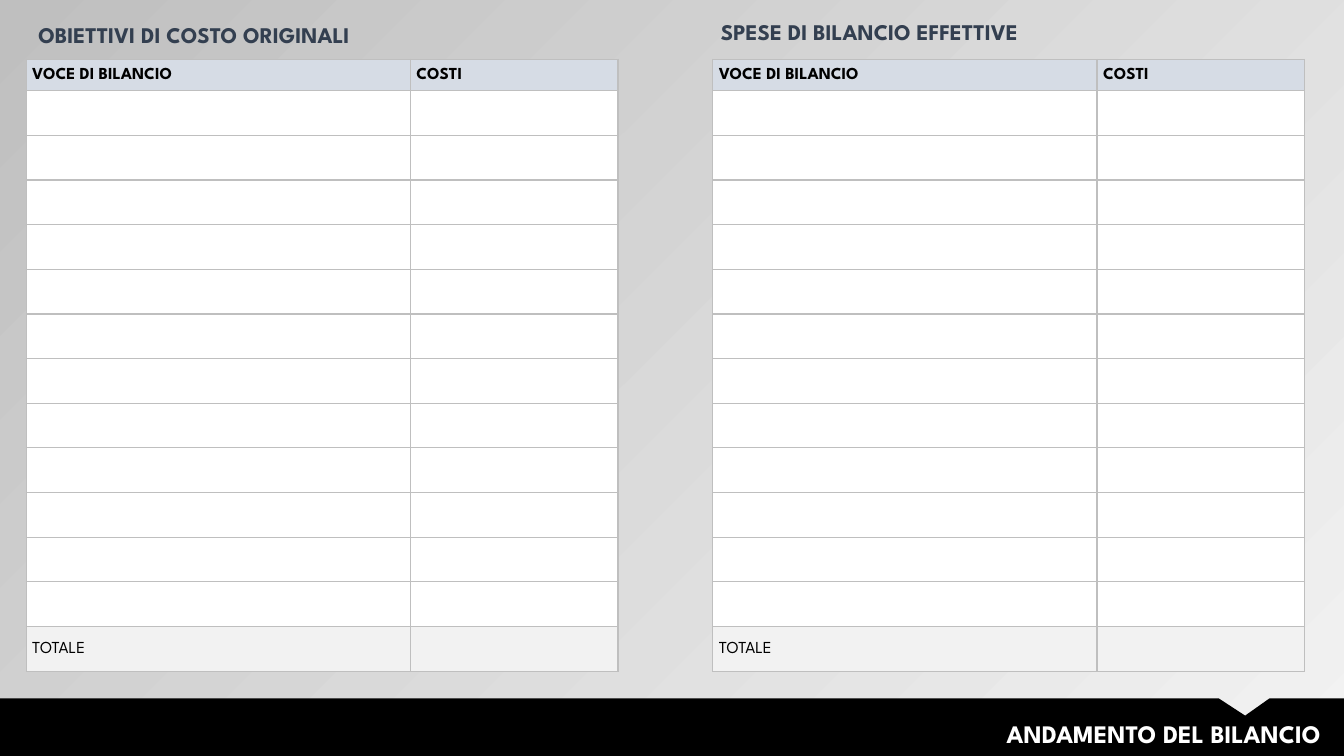
from lxml.etree import SubElement as Sub
from pptx import Presentation
from pptx.dml.color import RGBColor as RGB
from pptx.enum.text import MSO_ANCHOR as Anchor, MSO_AUTO_SIZE as Auto, PP_ALIGN as Align
from pptx.oxml.ns import qn
from pptx.util import Inches, Pt

FONT = "League Spartan"
BLACK = RGB(0, 0, 0)
WHITE = RGB(0xFF, 0xFF, 0xFF)
NAVY = RGB(0x33, 0x3F, 0x50)
BLUE = RGB(0xD6, 0xDC, 0xE5)
PALE = RGB(0xF2, 0xF2, 0xF2)
GREY = RGB(0xBF, 0xBF, 0xBF)
ITEMS = 12
HEAD = 0.31


def style(para, size, color, bold=True):
    """Set the font of a whole paragraph."""
    font = para.font
    font.name, font.size, font.bold = FONT, Pt(size), bold
    font.color.rgb = color


def backdrop(slide):
    """Fill the background with a diagonal grey gradient."""
    fill = slide.background.fill
    fill.gradient()
    fill.gradient_angle = 135
    for stop, color, place in zip(fill.gradient_stops, (PALE, GREY), (0, 1)):
        stop.color.rgb = color
        stop.position = place
    tint = next(slide.element.iter(qn("a:srgbClr")))
    Sub(tint, qn("a:alpha"), val="40000")


def footer(slide, left, top, width, height, text):
    """Draw the notched band with the slide title on it."""
    right, low = left + width, top + height
    edge = [(right - 1.24, top), (right - 0.98, top + 0.17), (right - 0.74, top),
            (right, top), (right, low), (left, low)]
    pen = slide.shapes.build_freeform(Inches(left), Inches(top))
    pen.add_line_segments([(Inches(x), Inches(y)) for x, y in edge])
    band = pen.convert_to_shape()
    band.shadow.inherit = False
    band.fill.solid()
    band.fill.fore_color.rgb = BLACK
    band.line.fill.background()

    title = slide.shapes.title
    band.element.addnext(title.element)
    title.left, title.top = Inches(right - 9.19), Inches(top + 0.15)
    title.width, title.height = Inches(9.06), Inches(0.4)
    frame = title.text_frame
    frame.text = text
    frame.auto_size = Auto.SHAPE_TO_FIT_TEXT
    frame.vertical_anchor = Anchor.TOP
    para = frame.paragraphs[0]
    para.alignment = Align.RIGHT
    para.line_spacing = 1.0
    style(para, 18, WHITE)


def heading(slide, left, top, text):
    """Write the heading of one table."""
    box = slide.shapes.add_textbox(Inches(left), Inches(top), Inches(5.58), Inches(0.4))
    frame = box.text_frame
    frame.word_wrap = True
    frame.auto_size = Auto.SHAPE_TO_FIT_TEXT
    frame.margin_left = frame.margin_right = Inches(0.12)
    frame.margin_top = frame.margin_bottom = Inches(0.06)
    para = frame.paragraphs[0]
    para.text = text
    para.line_spacing, para.space_before = Pt(21.5), Pt(3.2)
    style(para, 16, NAVY)


def paint(cell, text, color, bold):
    """Format one cell with its border, fill and text."""
    props = cell._tc.get_or_add_tcPr()
    for side in ("lnL", "lnR", "lnT", "lnB"):
        line = Sub(props, qn(f"a:{side}"), w=str(Pt(1)))
        Sub(Sub(line, qn("a:solidFill")), qn("a:srgbClr"), val=str(GREY))
    cell.fill.solid()
    cell.fill.fore_color.rgb = color
    cell.vertical_anchor = Anchor.MIDDLE
    cell.margin_left = cell.margin_right = Inches(0.06)
    cell.margin_top = cell.margin_bottom = 0
    para = cell.text_frame.paragraphs[0]
    para.text = text
    para.line_spacing = 1.07
    style(para, 12, BLACK, bold)


def budget(slide, left, top, width, height):
    """Build one cost table with header, empty items and total."""
    rows = [(("VOCE DI BILANCIO", "COSTI"), BLUE, True)]
    rows += [(("", ""), WHITE, False)] * ITEMS
    rows.append((("TOTALE", ""), PALE, False))
    table = slide.shapes.add_table(len(rows), 2, Inches(left), Inches(top),
                                   Inches(width), Inches(height)).table
    table.horz_banding = False
    table.columns[0].width = Inches(3.81)
    table.columns[1].width = Inches(width - 3.81)
    step = (height - HEAD) / (ITEMS + 1)
    for n, (texts, color, bold) in enumerate(rows):
        table.rows[n].height = Inches(step if n else HEAD)
        for cell, text in zip(table.rows[n].cells, texts):
            paint(cell, text, color, bold)


def main():
    """Build and save the slide."""
    deck = Presentation()
    deck.slide_width, deck.slide_height = Inches(13.33), Inches(7.5)
    slide = deck.slides.add_slide(deck.slide_layouts[5])
    backdrop(slide)
    footer(slide, 0, 6.93, 13.33, 0.57, "ANDAMENTO DEL BILANCIO")
    heading(slide, 0.26, 0.12, "OBIETTIVI DI COSTO ORIGINALI")
    heading(slide, 7.03, 0.09, "SPESE DI BILANCIO EFFETTIVE")
    for left in (0.26, 7.07):
        budget(slide, left, 0.59, 5.87, 6.07)
    deck.save("out.pptx")


if __name__ == "__main__":
    main()
